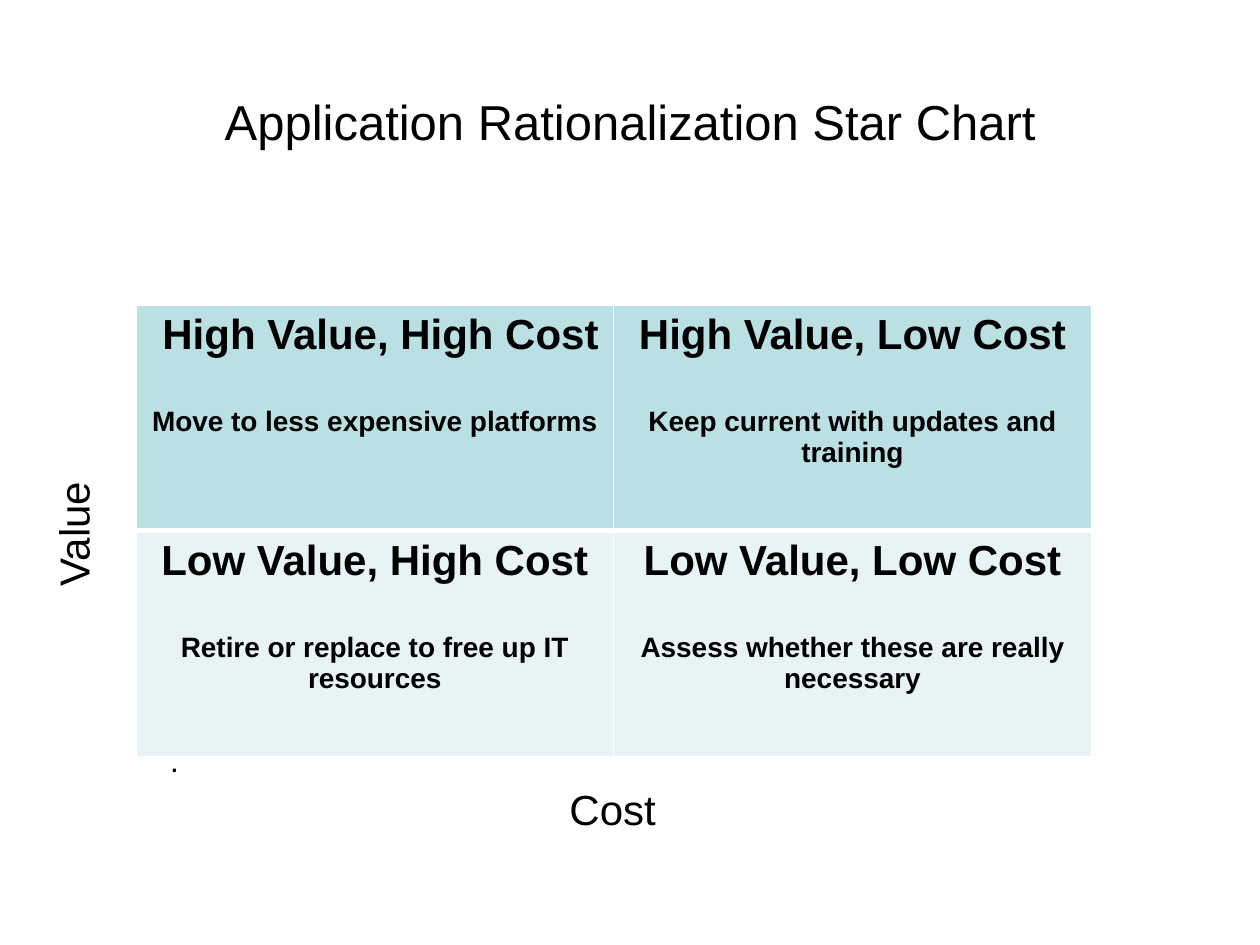
from dataclasses import dataclass

from lxml import etree
from pptx import Presentation
from pptx import util as u
from pptx.dml.color import RGBColor
from pptx.enum import text
from pptx.oxml.ns import qn

COLORS = {"text": "000000", "border": "FFFFFF", "high": "BBE0E3", "low": "E7F3F4"}
FONT = "Arial"
COL_W, ROW_H = 9.63, 4.55


@dataclass
class Quadrant:
    row: int
    col: int
    heading: str
    advice: str
    fill: str


@dataclass
class Label:
    text: str
    left: float
    top: float
    width: float
    height: float
    size: int
    rotation: int = 0


QUADRANTS = [
    Quadrant(0, 0, " High Value, High Cost", "Move to less expensive platforms", "high"),
    Quadrant(0, 1, "High Value, Low Cost", "Keep current with updates and training", "high"),
    Quadrant(1, 0, "Low Value, High Cost", "Retire or replace to free up IT resources", "low"),
    Quadrant(1, 1, "Low Value, Low Cost", "Assess whether these are really necessary", "low"),
]
LABELS = [
    Label("Value", 0.1, 10.06, 2.74, 1.27, 24, 270),
    Label("Cost", 11.23, 15.67, 2.54, 1.27, 24),
    Label(".", 3.18, 14.81, 18.62, 1.02, 18),
]


def add_run(p, content: str, size: int, bold: bool = False) -> None:
    r = p.add_run()
    r.text = content
    r.font.name, r.font.size, r.font.bold = FONT, u.Pt(size), bold
    r.font.color.rgb = RGBColor.from_string(COLORS["text"])


def set_borders(cell, widths: dict[str, float]) -> None:
    """Draw solid borders; call before filling, as lines precede the fill in XML."""
    tc_pr = cell._tc.get_or_add_tcPr()
    for side, width in widths.items():
        ln = etree.SubElement(tc_pr, qn(f"a:ln{side}"), w=str(u.Pt(width)))
        fill = etree.SubElement(ln, qn("a:solidFill"))
        etree.SubElement(fill, qn("a:srgbClr"), val=COLORS["border"])


def fill_quadrant(cell, quadrant: Quadrant) -> None:
    top, bottom = (1, 3) if quadrant.row == 0 else (3, 1)
    set_borders(cell, {"L": 1, "R": 1, "T": top, "B": bottom})
    cell.fill.solid()
    cell.fill.fore_color.rgb = RGBColor.from_string(COLORS[quadrant.fill])
    tf = cell.text_frame
    heading, advice = tf.paragraphs[0], tf.add_paragraph()
    heading.alignment = advice.alignment = text.PP_ALIGN.CENTER
    advice.space_before = u.Pt(27.6)
    add_run(heading, quadrant.heading, 24, bold=True)
    add_run(advice, quadrant.advice, 16, bold=True)


def add_matrix(slide) -> None:
    frame = slide.shapes.add_table(
        2, 2, u.Cm(2.74), u.Cm(6.15), u.Cm(2 * COL_W), u.Cm(2 * ROW_H))
    table = frame.table
    for column in table.columns:
        column.width = u.Cm(COL_W)
    for row in table.rows:
        row.height = u.Cm(ROW_H)
    for quadrant in QUADRANTS:
        fill_quadrant(table.cell(quadrant.row, quadrant.col), quadrant)


def add_label(slide, label: Label) -> None:
    sp = slide.shapes.add_textbox(
        u.Cm(label.left), u.Cm(label.top), u.Cm(label.width), u.Cm(label.height))
    sp.rotation = label.rotation
    tf = sp.text_frame
    tf.word_wrap = True
    tf.auto_size = text.MSO_AUTO_SIZE.SHAPE_TO_FIT_TEXT
    add_run(tf.paragraphs[0], label.text, label.size)


def set_title(slide, content: str) -> None:
    sp = slide.shapes.title
    sp.left, sp.top, sp.width, sp.height = u.Cm(1.9), u.Cm(1.7), u.Cm(21.6), u.Cm(1.47)
    tf = sp.text_frame
    tf.auto_size = text.MSO_AUTO_SIZE.NONE
    tf.vertical_anchor = text.MSO_ANCHOR.MIDDLE
    p = tf.paragraphs[0]
    p.alignment = text.PP_ALIGN.CENTER
    add_run(p, content, 28)


def main() -> None:
    prs = Presentation()
    prs.slide_width, prs.slide_height = u.Cm(25.4), u.Cm(19.05)
    slide = prs.slides.add_slide(prs.slide_layouts.get_by_name("Title Only"))
    set_title(slide, "Application Rationalization Star Chart")
    add_matrix(slide)
    for label in LABELS:
        add_label(slide, label)
    prs.save("out.pptx")


if __name__ == "__main__":
    main()
